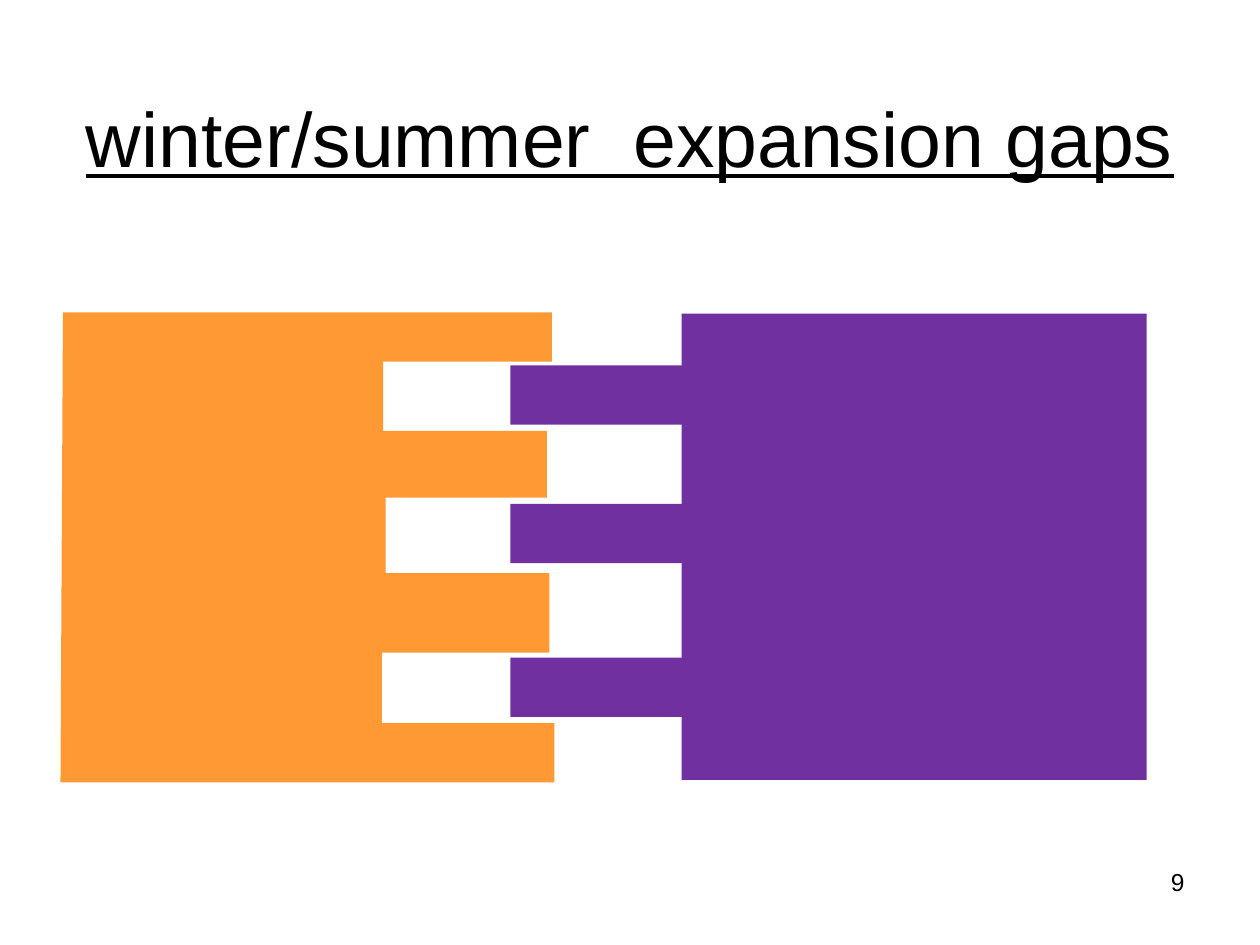
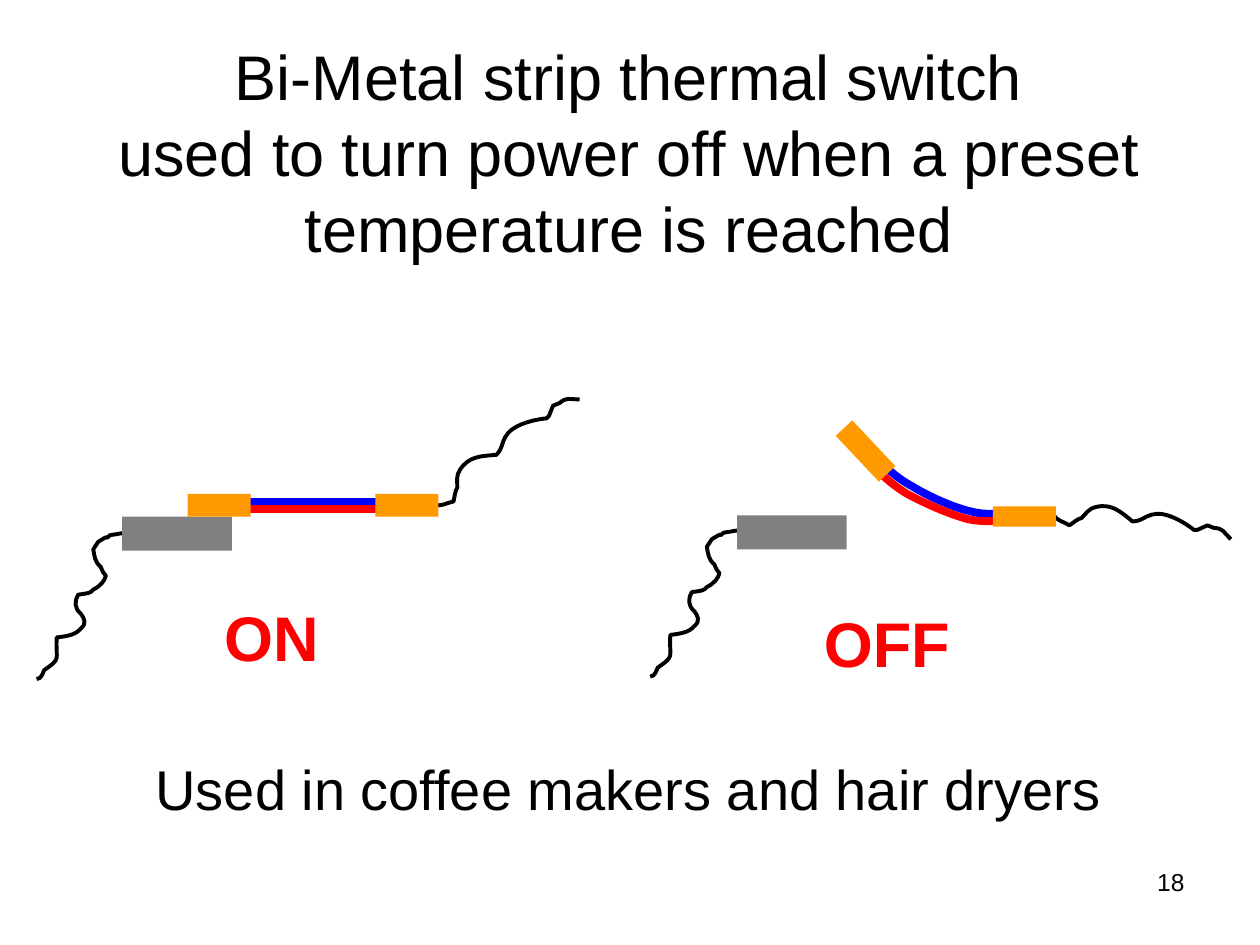
from lxml import etree
from pptx import Presentation
from pptx.dml.color import RGBColor
from pptx.enum.shapes import MSO_CONNECTOR as Connector, MSO_SHAPE as Shape
from pptx.enum.text import MSO_ANCHOR as Anchor, MSO_AUTO_SIZE as AutoSize, PP_ALIGN as Align
from pptx.oxml.ns import qn
from pptx.util import Inches, Pt

FONT = "Arial"
COLORS = {
    "text": "000000",
    "comb": "FF9933",
    "joint": "7030A0",
    "contact": "FF9900",
    "terminal": "808080",
    "hot": "FF0000",
    "cold": "0000FF",
}
WIRE_WIDTH = 2.25
STRIP_WIDTH = 4.5

COMB = [
    (0.5, 2.48), (4.38, 2.48), (4.38, 2.87), (3.04, 2.87), (3.04, 3.42),
    (4.34, 3.42), (4.34, 3.95), (3.06, 3.95), (3.06, 4.55), (4.36, 4.55),
    (4.36, 5.18), (3.03, 5.18), (3.03, 5.74), (4.4, 5.74), (4.4, 6.21),
    (0.48, 6.21),
]
TERMINAL_WIRE = [
    (1.04, 4.23),
    (1, 4.23), (0.96, 4.23), (0.93, 4.24),
    (0.91, 4.24), (0.87, 4.25), (0.87, 4.25),
    (0.83, 4.29), (0.88, 4.25), (0.83, 4.27),
    (0.81, 4.28), (0.8, 4.29), (0.78, 4.3),
    (0.77, 4.32), (0.75, 4.34), (0.74, 4.36),
    (0.75, 4.41), (0.75, 4.46), (0.8, 4.5),
    (0.82, 4.55), (0.81, 4.53), (0.84, 4.57),
    (0.83, 4.61), (0.8, 4.65), (0.74, 4.68),
    (0.72, 4.71), (0.69, 4.71), (0.62, 4.72),
    (0.59, 4.77), (0.59, 4.83), (0.64, 4.87),
    (0.67, 4.91), (0.69, 4.95), (0.64, 4.99),
    (0.6, 5.04), (0.53, 5.05), (0.45, 5.06),
    (0.44, 5.25), (0.49, 5.22), (0.35, 5.32),
    (0.34, 5.34), (0.33, 5.39), (0.29, 5.39),
]
STRIP_WIRE = [
    (3.44, 4),
    (3.5, 4.03), (3.54, 3.99), (3.6, 3.98),
    (3.61, 3.94), (3.61, 3.9), (3.63, 3.87),
    (3.63, 3.82), (3.62, 3.77), (3.65, 3.73),
    (3.72, 3.62), (3.82, 3.62), (3.94, 3.61),
    (3.99, 3.56), (3.98, 3.52), (4.01, 3.47),
    (4.06, 3.37), (4.24, 3.33), (4.34, 3.32),
    (4.35, 3.31), (4.37, 3.29), (4.37, 3.27),
    (4.38, 3.25), (4.38, 3.24), (4.39, 3.22),
    (4.4, 3.21), (4.43, 3.21), (4.44, 3.2),
    (4.5, 3.15), (4.51, 3.17), (4.6, 3.17),
]
BENT_COLD = [
    (8.09, 4.06),
    (8.03, 4.06), (7.85, 4.1), (7.71, 4.06),
    (7.57, 4.03), (7.37, 3.94), (7.24, 3.86),
    (7.11, 3.79), (7.02, 3.7), (6.94, 3.62),
]
BENT_HOT = [
    (8.1, 4.12),
    (7.96, 4.13), (7.82, 4.15), (7.68, 4.12),
    (7.53, 4.08), (7.33, 3.99), (7.2, 3.92),
    (7.07, 3.84), (6.99, 3.76), (6.9, 3.67),
]


def color(name):
    return RGBColor.from_string(COLORS[name])


def write(frame, text, size, align, fill="text", bold=False, underline=False):
    para = frame.paragraphs[0]
    para.text = text
    para.alignment = align
    for span in para.runs:
        font = span.font
        font.name, font.size = FONT, Pt(size)
        font.bold, font.underline = bold, underline
        font.color.rgb = color(fill)


def add_page(deck, title, title_area, size, number, underline=False):
    page = deck.slides.add_slide(deck.slide_layouts[5])
    holder = page.shapes.title
    holder.left, holder.top, holder.width, holder.height = map(Inches, title_area)
    frame = holder.text_frame
    frame.auto_size = AutoSize.NONE
    frame.vertical_anchor = Anchor.MIDDLE
    write(frame, title, size, Align.CENTER, underline=underline)
    add_text(page, str(number), (7.17, 6.83, 2.33, 0.52), 14, Align.RIGHT)
    return page


def add_text(parent, text, area, size, align, wrap=True, **style):
    box = parent.shapes.add_textbox(*map(Inches, area))
    frame = box.text_frame
    frame.word_wrap = wrap
    frame.auto_size = AutoSize.NONE if wrap else AutoSize.SHAPE_TO_FIT_TEXT
    write(frame, text, size, align, **style)


def paint(shape, fill):
    shape.shadow.inherit = False
    shape.fill.solid()
    shape.fill.fore_color.rgb = color(fill)
    shape.line.fill.background()


def add_block(parent, area, fill, rotation=0):
    block = parent.shapes.add_shape(Shape.RECTANGLE, *map(Inches, area))
    block.rotation = rotation
    paint(block, fill)


def add_outline(parent, points, close):
    start, *rest = [(Inches(x), Inches(y)) for x, y in points]
    builder = parent.shapes.build_freeform(*start)
    builder.add_line_segments(rest, close=close)
    return builder.convert_to_shape()


def bend(shape):
    segments = list(shape._element.iter(qn("a:lnTo")))
    for first in range(0, len(segments), 3):
        curve, *others = segments[first:first + 3]
        cubic = etree.Element(qn("a:cubicBezTo"))
        curve.addprevious(cubic)
        for segment in (curve, *others):
            cubic.append(segment[0])
            segment.getparent().remove(segment)


def add_curve(parent, points, stroke="text", width=WIRE_WIDTH, shift=(0, 0), rotation=0):
    dx, dy = shift
    curve = add_outline(parent, [(x + dx, y + dy) for x, y in points], close=False)
    bend(curve)
    curve.rotation = rotation
    curve.shadow.inherit = False
    curve.fill.background()
    curve.line.color.rgb = color(stroke)
    curve.line.width = Pt(width)


def add_straight(parent, start, end, stroke):
    line = parent.shapes.add_connector(Connector.STRAIGHT, *map(Inches, start + end))
    line.line.color.rgb = color(stroke)
    line.line.width = Pt(STRIP_WIDTH)
    etree.SubElement(line._element.spPr, qn("a:effectLst"))


def add_terminal(parent, left, top):
    add_block(parent, (left, top, 0.27, 0.87), "terminal", rotation=270)


def add_state(page, label, area):
    state = page.shapes.add_group_shape()
    add_text(state, label, area, 36, Align.LEFT, wrap=False, fill="hot", bold=True)
    return state


def build_gaps(deck):
    page = add_page(deck, "winter/summer  expansion gaps", (0.5, 0.46, 9, 1.25), 44, 9,
                    underline=True)
    paint(add_outline(page, COMB, close=True), "comb")
    joint = page.shapes.add_group_shape()
    add_block(joint, (5.41, 2.49, 3.69, 3.7), "joint")
    for top in (2.9, 4, 5.22):
        add_block(joint, (4.05, top, 1.41, 0.47), "joint")


def build_on_state(page):
    state = add_state(page, "ON", (1.68, 4.7, 0.95, 0.7))
    add_curve(state, STRIP_WIRE)
    add_curve(state, TERMINAL_WIRE)
    add_terminal(state, 1.27, 3.8)
    add_straight(state, (3.11, 4.04), (1.83, 4.04), "hot")
    add_straight(state, (3.11, 3.98), (1.84, 3.98), "cold")
    for left in (1.49, 2.98):
        add_block(state, (left, 3.92, 0.5, 0.18), "contact")


def build_off_state(page):
    state = add_state(page, "OFF", (6.44, 4.75, 1.2, 0.7))
    add_curve(state, STRIP_WIRE, shift=(5.04, 0.59), rotation=43.9)
    add_curve(state, TERMINAL_WIRE, shift=(4.87, -0.02))
    add_curve(state, BENT_COLD, "cold", STRIP_WIDTH)
    add_curve(state, BENT_HOT, "hot", STRIP_WIDTH)
    add_block(state, (6.62, 3.49, 0.5, 0.18), "contact", rotation=46.7)
    add_block(state, (7.88, 4.02, 0.5, 0.16), "contact")
    add_terminal(state, 6.15, 3.79)


def build_switch(deck):
    title = ("Bi-Metal strip thermal switch\n"
             "used to turn power off when a preset temperature is reached")
    page = add_page(deck, title, (0.49, 0.1, 9, 2.2), 36, 18)
    add_text(page, "Used in coffee makers and hair dryers", (1.11, 5.94, 7.76, 0.64),
             32, Align.CENTER, wrap=False)
    build_on_state(page)
    build_off_state(page)


def main():
    deck = Presentation()
    deck.slide_width, deck.slide_height = Inches(10), Inches(7.5)
    build_gaps(deck)
    build_switch(deck)
    deck.save("out.pptx")


if __name__ == "__main__":
    main()
